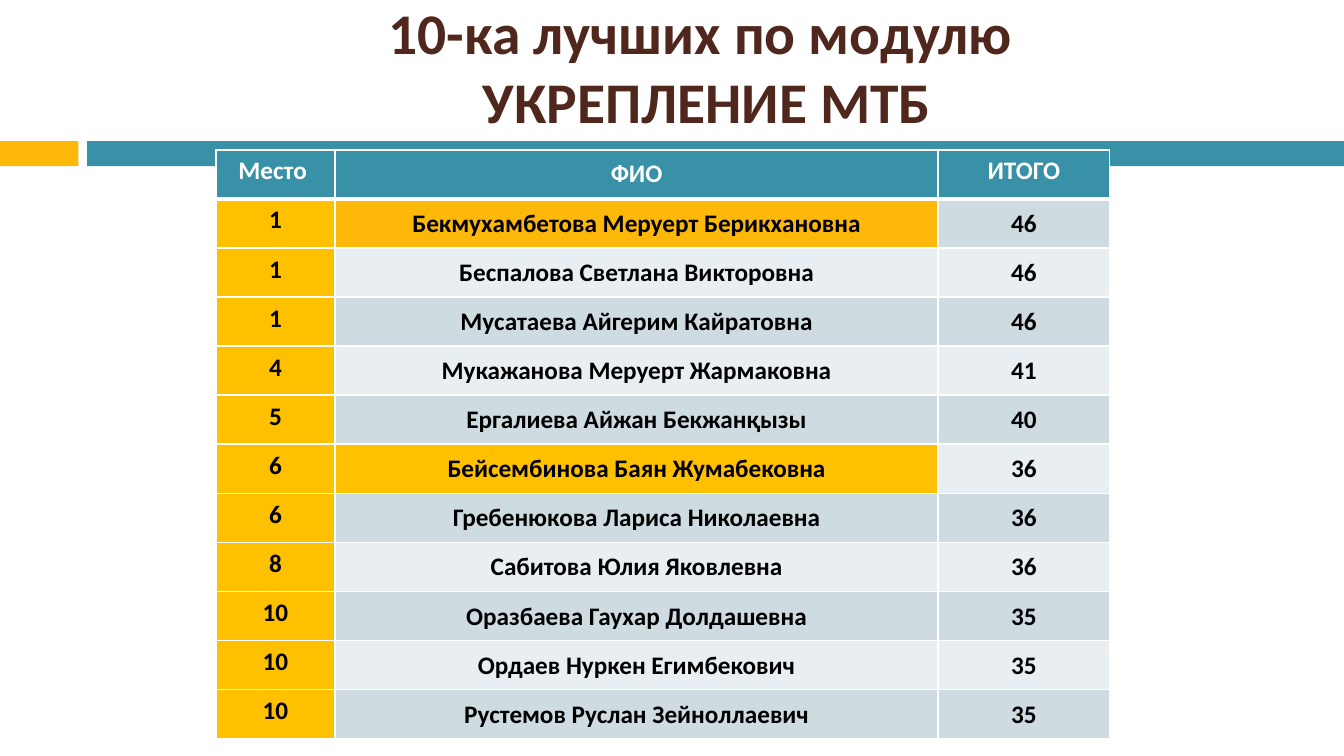
from dataclasses import dataclass

from lxml.etree import SubElement
from pptx import Presentation
from pptx.dml.color import RGBColor
from pptx.enum.shapes import MSO_SHAPE as Shape
from pptx.enum.text import MSO_ANCHOR as Anchor, MSO_AUTO_SIZE as AutoSize, PP_ALIGN as Align
from pptx.oxml.ns import qn
from pptx.util import Pt


@dataclass(frozen=True)
class Theme:
    font: str = "Calibri"
    title_size: float = 34.2
    table_size: float = 15
    brown: str = "4F271C"
    teal: str = "3891A7"
    amber: str = "FEB80A"
    gold: str = "FFC000"
    band_dark: str = "CEDCE1"
    band_light: str = "E8EEF1"
    white: str = "FFFFFF"
    black: str = "000000"


theme = Theme()


def format_text(frame, size, color):
    for paragraph in frame.paragraphs:
        paragraph.alignment = Align.CENTER
        for run in paragraph.runs:
            run.font.name = theme.font
            run.font.size = Pt(size)
            run.font.bold = True
            run.font.color.rgb = RGBColor.from_string(color)


def add_borders(cell, bottom_width):
    """White lines of 1 pt on the sides and top, and of the given width below."""
    properties = cell._tc.get_or_add_tcPr()
    for side, width in (("L", 1), ("R", 1), ("T", 1), ("B", bottom_width)):
        line = SubElement(properties, qn(f"a:ln{side}"), w=str(Pt(width)))
        SubElement(SubElement(line, qn("a:solidFill")), qn("a:srgbClr"), val=theme.white)


header = ("Место ", "ФИО", "ИТОГО")
ranking = [
    (1, "Бекмухамбетова Меруерт Берикхановна", 46),
    (1, "Беспалова Светлана Викторовна", 46),
    (1, "Мусатаева Айгерим Кайратовна", 46),
    (4, "Мукажанова Меруерт Жармаковна", 41),
    (5, "Ергалиева Айжан Бекжанқызы", 40),
    (6, "Бейсембинова Баян Жумабековна", 36),
    (6, "Гребенюкова Лариса Николаевна", 36),
    (8, "Сабитова Юлия Яковлевна", 36),
    (10, "Оразбаева Гаухар Долдашевна", 35),
    (10, "Ордаев Нуркен Егимбекович", 35),
    (10, "Рустемов Руслан Зейноллаевич", 35),
]
highlighted_names = {1: theme.amber, 6: theme.gold}

presentation = Presentation()
presentation.slide_width, presentation.slide_height = Pt(800), Pt(450)
slide = presentation.slides.add_slide(presentation.slide_layouts[5])

# Title
title = slide.shapes.title
title.left, title.top, title.width, title.height = Pt(64), Pt(3), Pt(713.5), Pt(72)
title_frame = title.text_frame
title_frame.text = "10-ка лучших по модулю \nУКРЕПЛЕНИЕ МТБ"
title_frame.auto_size = AutoSize.NONE
title_frame.vertical_anchor = Anchor.MIDDLE
format_text(title_frame, theme.title_size, theme.brown)

# Two-colour stripe
for left, width, color in ((0, 46.7, theme.amber), (51.8, 748.2, theme.teal)):
    stripe = slide.shapes.add_shape(Shape.RECTANGLE, Pt(left), Pt(84), Pt(width), Pt(15))
    stripe.shadow.inherit = False
    stripe.fill.solid()
    stripe.fill.fore_color.rgb = RGBColor.from_string(color)
    stripe.line.fill.background()

# Ranking table
column_widths = (71, 359, 102)
row_height = 29.22
row_count = len(ranking) + 1
table = slide.shapes.add_table(
    row_count, len(header), Pt(128.5), Pt(89.2), Pt(sum(column_widths)), Pt(row_height * row_count)
).table
for column, width in zip(table.columns, column_widths):
    column.width = Pt(width)

for row_index, entry in enumerate([header, *ranking]):
    table.rows[row_index].height = Pt(row_height)
    is_header = row_index == 0
    band = theme.band_dark if row_index % 2 else theme.band_light
    fills = (theme.gold, highlighted_names.get(row_index, band), band)
    for column_index, value in enumerate(entry):
        cell = table.cell(row_index, column_index)
        cell.text_frame.text = str(value)
        format_text(cell.text_frame, theme.table_size, theme.white if is_header else theme.black)
        if column_index == 1 or (column_index == 2 and not is_header):
            cell.vertical_anchor = Anchor.MIDDLE
        if column_index > 0 and not is_header:
            cell.margin_left = cell.margin_right = cell.margin_top = Pt(0.75)
            cell.margin_bottom = 0
        add_borders(cell, 3 if is_header else 1)
        cell.fill.solid()
        cell.fill.fore_color.rgb = RGBColor.from_string(theme.teal if is_header else fills[column_index])

presentation.save("out.pptx")
